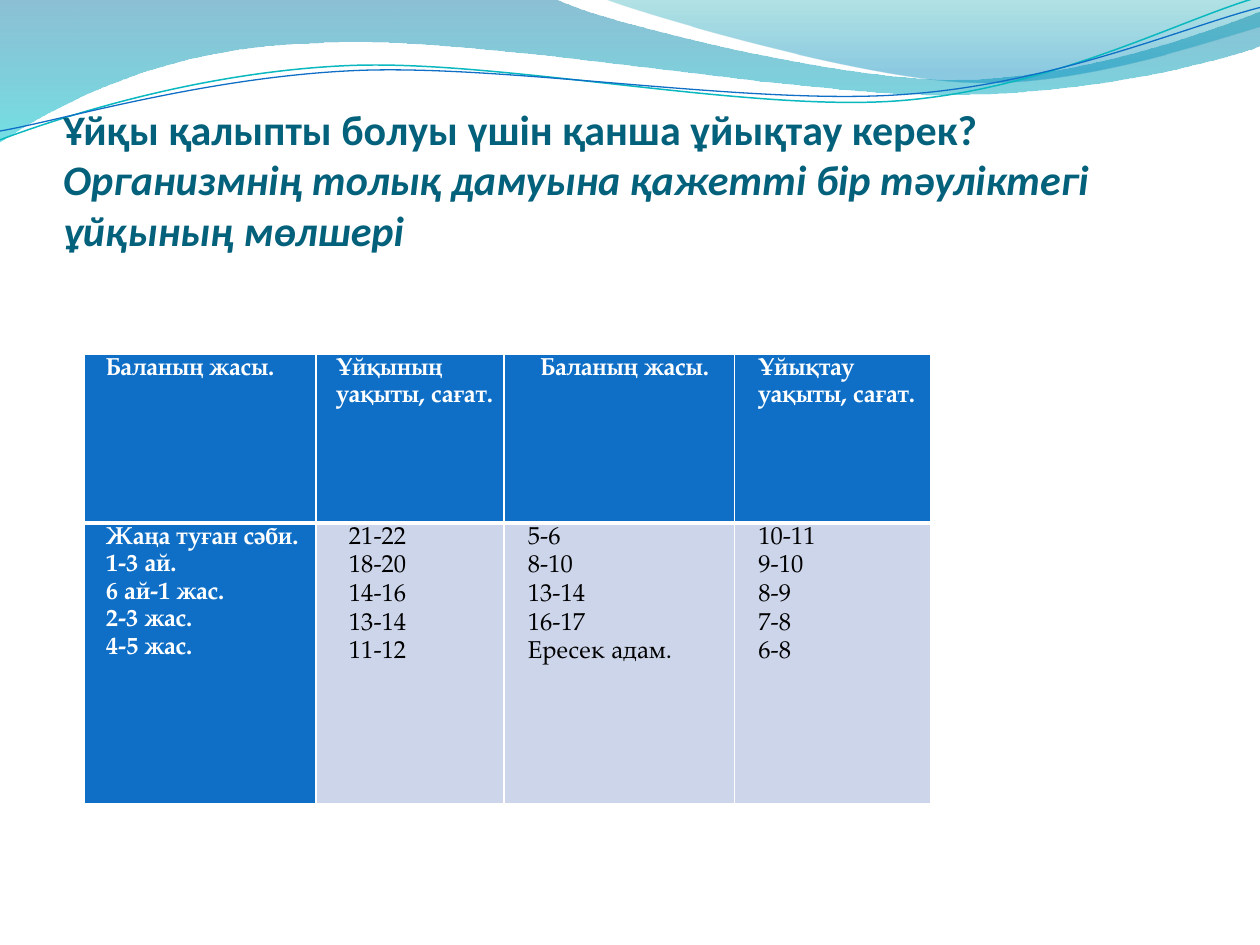
"""Build a slide on how much sleep each age needs."""
import math
from dataclasses import dataclass

from lxml import etree
from pptx import Presentation
from pptx.dml.color import RGBColor
from pptx.enum import text
from pptx.oxml import ns
from pptx.util import Inches, Pt

Point = tuple[float, float]
BLUE, PALE, WHITE, BLACK, TEAL = "0F6FC6", "CCD5EA", "FFFFFF", "000000", "04617B"


@dataclass
class Stop:
    position: float
    color: str
    opacity: int


@dataclass
class Wave:
    start: Point
    segments: list[tuple[Point, ...]]
    stops: tuple[Stop, ...] = ()
    line_color: str = ""
    line_width: float = 0
    rotation: float = 0
    center: Point = (0, 0)


@dataclass
class Column:
    width: float
    heading: str
    values: list[str]
    heading_indent: float
    value_indent: float


WAVES = [
    Wave((0, 0), [
        ((4.4, -0.01),),
        ((4.76, 0.17), (6.64, 0.63), (7.58, 0.63)),
        ((8.53, 0.63), (9.58, 0.26), (10, 0.09)),
        ((10.01, 0.36),),
        ((9.83, 0.44), (8.7, 0.76), (7.46, 0.75)),
        ((6.22, 0.75), (3.82, 0.28), (2.57, 0.34)),
        ((1.29, 0.36), (0.46, 0.83), (-0.01, 1.13)),
        ((0, 0),),
    ], stops=(Stop(0, "0074A1", 45), Stop(1, "00C6CF", 55))),
    Wave((4.79, -0.01), [
        ((5.09, 0.11), (6.82, 0.62), (7.69, 0.65)),
        ((8.56, 0.69), (9.61, 0.32), (10, 0.21)),
        ((10, 0),),
        ((4.79, -0.01),),
    ], stops=(Stop(0, "00A1A9", 30), Stop(0.8, "008BBF", 45))),
    Wave((0, 1.11), [
        ((0.48, 0.93), (1.58, 0.57), (2.77, 0.52)),
        ((3.95, 0.47), (5.93, 0.89), (7.13, 0.8)),
        ((8.33, 0.71), (9.38, 0.15), (9.98, -0.02)),
    ], line_color="0AB8BF", line_width=0.85, rotation=357.3, center=(4.99, 0.58)),
    Wave((0, 1.04), [
        ((0.47, 0.96), (1.64, 0.61), (2.83, 0.56)),
        ((4.03, 0.51), (5.97, 0.84), (7.17, 0.75)),
        ((8.36, 0.67), (9.41, 0.21), (10, 0.06)),
    ], line_color=BLUE, line_width=0.75, rotation=357.3, center=(5, 0.59)),
]

COLUMNS = [
    Column(1.84, "Баланың жасы.",
           ["Жаңа туған сәби.", "1-3 ай.", "6 ай-1 жас.", "2-3 жас.", "4-5 жас."], 0.1, 0.1),
    Column(1.49, "Ұйқының уақыты, сағат.",
           ["21-22", "18-20", "14-16", "13-14", "11-12"], 0.09, 0.19),
    Column(1.83, "Баланың жасы.",
           ["5-6", "8-10", "13-14", "16-17", "Ересек адам."], 0.22, 0.12),
    Column(1.56, "Ұйықтау уақыты, сағат.",
           ["10-11", "9-10", "8-9", "7-8", "6-8"], 0.12, 0.12),
]
ROW_HEIGHTS = [1.34, 2.23]


def rgb(value: str) -> RGBColor:
    return RGBColor.from_string(value)


def unrotate(point: Point, wave: Wave) -> Point:
    """Place a point, in slide units, as it lies before the wave is turned."""
    angle = math.radians(-wave.rotation)
    x, y = point[0] - wave.center[0], point[1] - wave.center[1]
    return (Inches(wave.center[0] + x * math.cos(angle) - y * math.sin(angle)),
            Inches(wave.center[1] + x * math.sin(angle) + y * math.cos(angle)))


def bend(shape, segments: list[tuple[Point, ...]]) -> None:
    """Join each run of three straight steps into one cubic curve."""
    steps = iter(list(shape._element.iter(ns.qn("a:lnTo"))))
    for segment in segments:
        first, *others = [next(steps) for _ in segment]
        if others:
            first.tag = ns.qn("a:cubicBezTo")
        for step in others:
            first.append(step[0])
            step.getparent().remove(step)


def draw_wave(page, wave: Wave) -> None:
    builder = page.shapes.build_freeform(*unrotate(wave.start, wave))
    points = [unrotate(point, wave) for segment in wave.segments for point in segment]
    builder.add_line_segments(points, close=bool(wave.stops))
    shape = builder.convert_to_shape()
    bend(shape, wave.segments)
    shape.rotation = wave.rotation
    shape.shadow.inherit = False
    if not wave.stops:
        shape.fill.background()
        shape.line.color.rgb = rgb(wave.line_color)
        shape.line.width = Pt(wave.line_width)
        return
    shape.line.fill.background()
    shape.fill.gradient()
    shape.fill.gradient_angle = 270
    for target, stop in zip(shape.fill.gradient_stops, wave.stops):
        target.position = stop.position
        target.color.rgb = rgb(stop.color)
    for color, stop in zip(shape._element.iter(ns.qn("a:srgbClr")), wave.stops):
        etree.SubElement(color, ns.qn("a:alpha"), val=str(stop.opacity * 1000))


def set_borders(cell, widths: dict[str, float]) -> None:
    properties = cell._tc.get_or_add_tcPr()
    for side, width in widths.items():
        line = etree.SubElement(properties, ns.qn(f"a:ln{side}"), w=str(Pt(width)))
        fill = etree.SubElement(line, ns.qn("a:solidFill"))
        etree.SubElement(fill, ns.qn("a:srgbClr"), val=WHITE)


def fill_cell(cell, words: str, indent: float, strong: bool, borders: dict[str, float]) -> None:
    set_borders(cell, borders)
    cell.fill.solid()
    cell.fill.fore_color.rgb = rgb(BLUE if strong else PALE)
    cell.margin_left = cell.margin_right = Inches(0.07)
    cell.margin_top = cell.margin_bottom = 0
    para = cell.text_frame.paragraphs[0]
    para.text = words
    para.line_spacing = 1.15
    para.font.name = "TeX Gyre Pagella"
    para.font.size = Pt(14)
    para.font.bold = strong
    para.font.color.rgb = rgb(WHITE if strong else BLACK)
    properties = para._p.get_or_add_pPr()
    properties.set("marL", str(Inches(indent)))
    properties.set("indent", "0")


def draw_table(page) -> None:
    width = sum(column.width for column in COLUMNS)
    frame = page.shapes.add_table(len(ROW_HEIGHTS), len(COLUMNS), Inches(0.67), Inches(2.81),
                                  Inches(width), Inches(sum(ROW_HEIGHTS)))
    table = frame.table
    table.first_col = True
    for row, height in zip(table.rows, ROW_HEIGHTS):
        row.height = Inches(height)
    for index, column in enumerate(COLUMNS):
        table.columns[index].width = Inches(column.width)
        fill_cell(table.cell(0, index), column.heading, column.heading_indent, True,
                  {"L": 1, "R": 1, "T": 1, "B": 3})
        fill_cell(table.cell(1, index), "\n".join(column.values), column.value_indent,
                  index == 0, {"L": 1, "R": 1, "T": 3, "B": 1})


def write_title(page) -> None:
    title = page.shapes.title
    page.shapes._spTree.append(title._element)
    title.left, title.top = Inches(0.5), Inches(0.77)
    title.width, title.height = Inches(9), Inches(1.25)
    frame = title.text_frame
    frame.word_wrap = True
    frame.auto_size = text.MSO_AUTO_SIZE.NONE
    frame.vertical_anchor = text.MSO_ANCHOR.BOTTOM
    frame.margin_left = frame.margin_right = frame.margin_bottom = 0
    frame.margin_top = Inches(0.05)
    para = frame.paragraphs[0]
    para.alignment = text.PP_ALIGN.LEFT
    para.font.name = "Calibri"
    para.font.size = Pt(24)
    para.font.bold = True
    para.font.color.rgb = rgb(TEAL)
    para.add_run().text = "Ұйқы қалыпты болуы үшін қанша ұйықтау керек? "
    span = para.add_run()
    span.text = "Организмнің толық дамуына қажетті бір тәуліктегі ұйқының мөлшері"
    span.font.italic = True


def main() -> None:
    deck = Presentation()
    deck.slide_width, deck.slide_height = Inches(10), Inches(7.5)
    page = deck.slides.add_slide(deck.slide_layouts[5])
    for wave in WAVES:
        draw_wave(page, wave)
    write_title(page)
    draw_table(page)
    deck.save("out.pptx")


if __name__ == "__main__":
    main()
